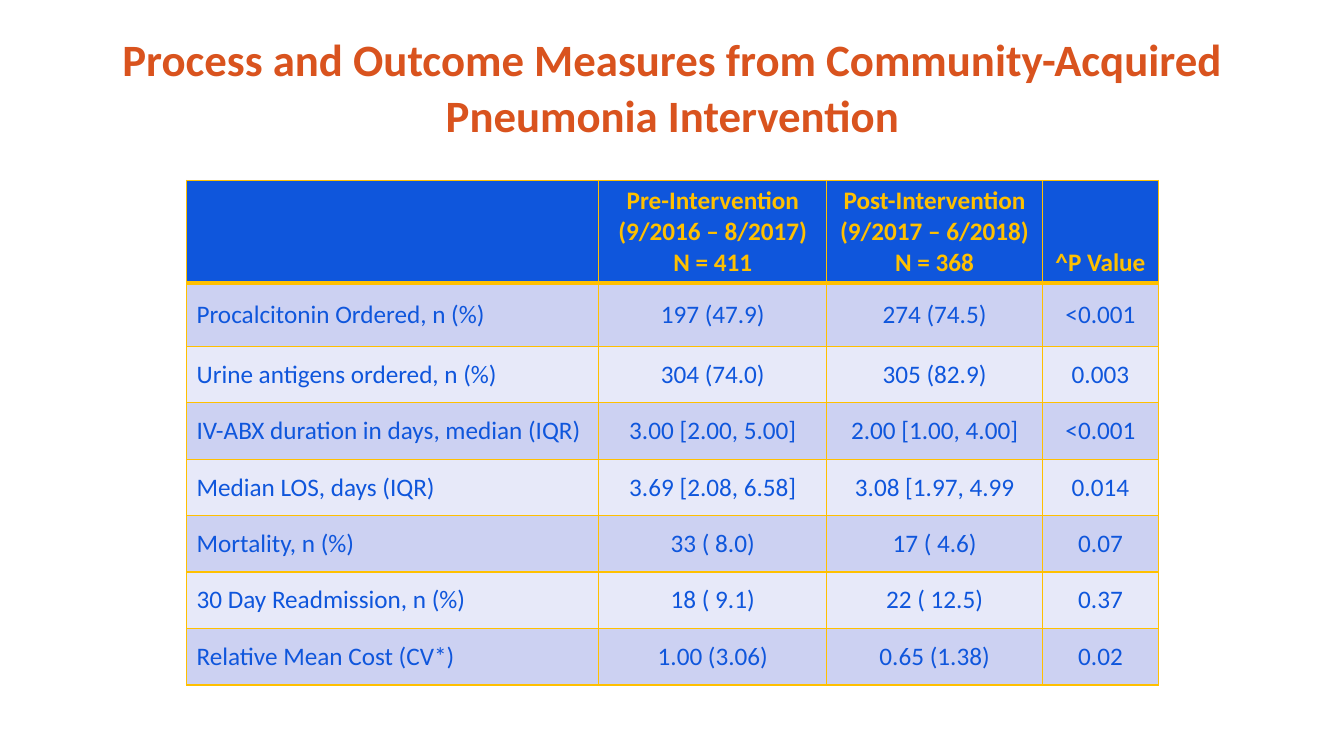
from lxml import etree
from pptx import Presentation
from pptx.dml.color import RGBColor
from pptx.enum import text
from pptx.oxml.ns import qn
from pptx.util import Inches, Pt

ORANGE = RGBColor(0xD9, 0x53, 0x1E)
BLUE = RGBColor(0x0F, 0x56, 0xDC)
GOLD = RGBColor(0xFF, 0xC0, 0x00)
BAND_DARK = RGBColor(0xCC, 0xD1, 0xF2)
BAND_LIGHT = RGBColor(0xE7, 0xE9, 0xF9)

TITLE_FONT = {"name": "Calibri", "size": Pt(32), "bold": True}
HEADER_FONT = {"name": "Calibri", "size": Pt(18), "bold": True}
BODY_FONT = {"name": "Calibri", "size": Pt(18), "bold": False}

TITLE = "Process and Outcome Measures from Community-Acquired Pneumonia Intervention"
COLUMN_WIDTHS = [4.09, 2.26, 2.14, 1.15]
ROW_HEIGHTS = [1.0, 0.63] + [0.56] * 6
MEASURES = [
    ["", "Pre-Intervention\n(9/2016 – 8/2017)\nN = 411",
     "Post-Intervention\n(9/2017 – 6/2018)\nN = 368", "^P Value"],
    ["Procalcitonin Ordered, n (%)", "197 (47.9)", "274 (74.5)", "<0.001"],
    ["Urine antigens ordered, n (%)", "304 (74.0)", "305 (82.9)", "0.003"],
    ["IV-ABX duration in days, median (IQR)", "3.00 [2.00, 5.00]", "2.00 [1.00, 4.00]", "<0.001"],
    ["Median LOS, days (IQR)", "3.69 [2.08, 6.58]", "3.08 [1.97, 4.99", "0.014"],
    ["Mortality, n (%)", "33 ( 8.0)", "17 ( 4.6)", "0.07"],
    ["30 Day Readmission, n (%)", "18 ( 9.1)", "22 ( 12.5)", "0.37"],
    ["Relative Mean Cost (CV*)", "1.00 (3.06)", "0.65 (1.38)", "0.02"],
]


def format_font(font, values, color):
    for key, value in values.items():
        setattr(font, key, value)
    font.color.rgb = color


def add_title(page):
    title = page.shapes.title
    title.left, title.top = Inches(0.67), Inches(0.45)
    title.width, title.height = Inches(12), Inches(1)
    frame = title.text_frame
    frame.text = TITLE
    frame.word_wrap = True
    frame.auto_size = text.MSO_AUTO_SIZE.NONE
    frame.vertical_anchor = text.MSO_ANCHOR.BOTTOM
    para = frame.paragraphs[0]
    para.alignment = text.PP_ALIGN.CENTER
    para.line_spacing = Pt(40)
    format_font(para.runs[0].font, TITLE_FONT, ORANGE)


def set_borders(cell, widths):
    properties = cell._tc.get_or_add_tcPr()
    for index, (side, width) in enumerate(widths.items()):
        line = etree.Element(qn(f"a:ln{side}"), w=str(Pt(width)))
        fill = etree.SubElement(line, qn("a:solidFill"))
        etree.SubElement(fill, qn("a:srgbClr"), val=str(GOLD))
        properties.insert(index, line)


def fill_cell(cell, words, row, column):
    header = row == 0
    cell.text = words
    cell.vertical_anchor = text.MSO_ANCHOR.BOTTOM if header else text.MSO_ANCHOR.MIDDLE
    cell.fill.solid()
    cell.fill.fore_color.rgb = BLUE if header else BAND_DARK if row % 2 else BAND_LIGHT
    for para in cell.text_frame.paragraphs:
        para.alignment = text.PP_ALIGN.CENTER if column else text.PP_ALIGN.LEFT
        for span in para.runs:
            format_font(span.font, HEADER_FONT if header else BODY_FONT,
                        GOLD if header else BLUE)
    set_borders(cell, {"L": 1, "R": 1, "T": 3 if row == 1 else 1, "B": 3 if header else 1})


def add_measures_table(page):
    table = page.shapes.add_table(
        len(ROW_HEIGHTS), len(COLUMN_WIDTHS), Inches(1.85), Inches(1.79),
        Inches(sum(COLUMN_WIDTHS)), Inches(sum(ROW_HEIGHTS))).table
    for column, width in zip(table.columns, COLUMN_WIDTHS):
        column.width = Inches(width)
    for row, height in zip(table.rows, ROW_HEIGHTS):
        row.height = Inches(height)
    for row, values in enumerate(MEASURES):
        for column, words in enumerate(values):
            fill_cell(table.cell(row, column), words, row, column)


def main():
    deck = Presentation()
    deck.slide_width, deck.slide_height = Inches(13.33), Inches(7.5)
    page = deck.slides.add_slide(deck.slide_layouts[5])
    add_title(page)
    add_measures_table(page)
    deck.save("out.pptx")


if __name__ == "__main__":
    main()
